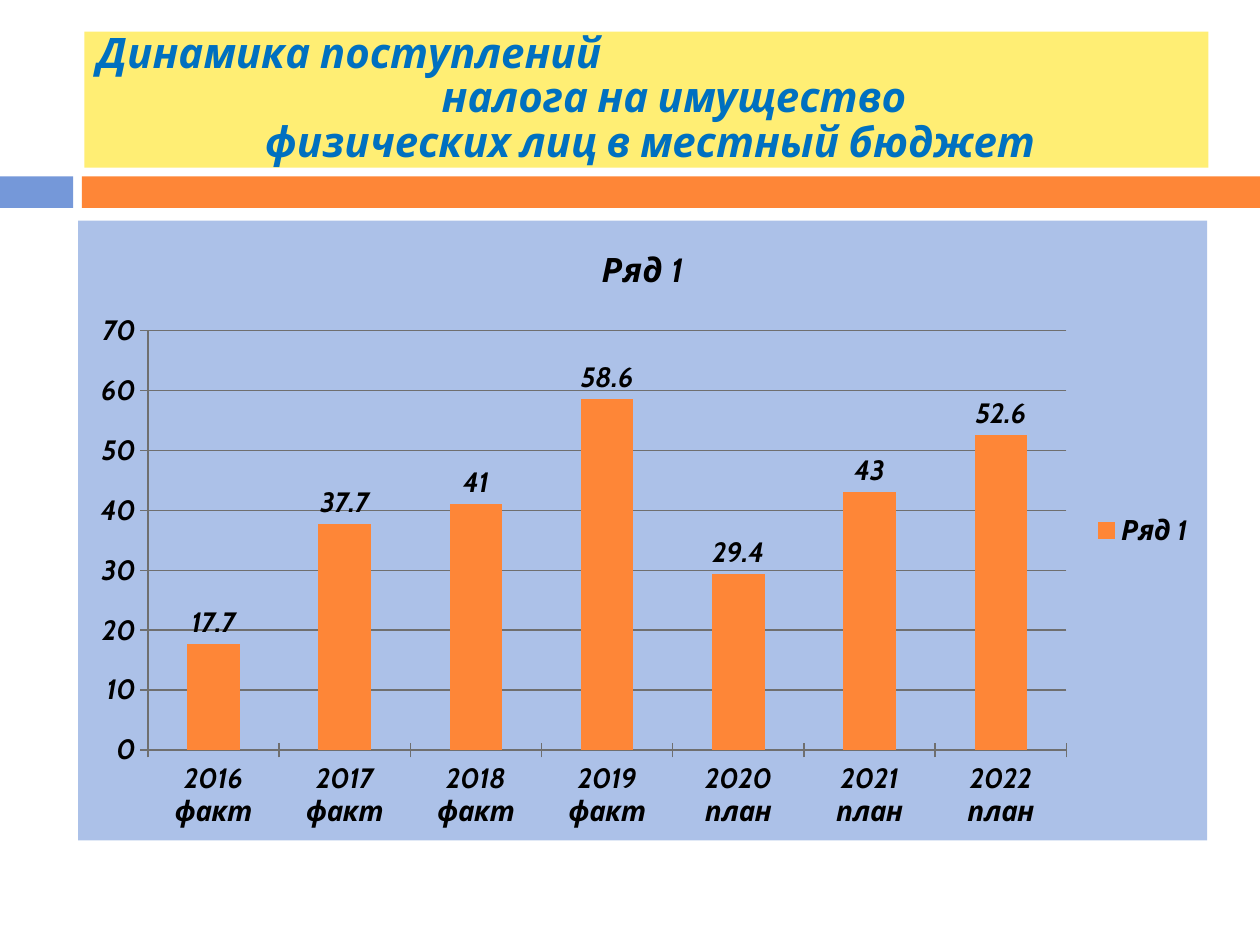
from lxml import etree
from pptx import Presentation
from pptx.chart.data import CategoryChartData
from pptx.dml.color import RGBColor
from pptx.enum.chart import XL_CHART_TYPE, XL_LABEL_POSITION, XL_LEGEND_POSITION, XL_TICK_MARK
from pptx.enum.shapes import MSO_SHAPE
from pptx.enum.text import MSO_ANCHOR, MSO_AUTO_SIZE, PP_ALIGN
from pptx.oxml import parse_xml
from pptx.oxml.ns import nsdecls
from pptx.util import Inches, Pt

RECTANGLE = MSO_SHAPE.RECTANGLE
COLUMNS = XL_CHART_TYPE.COLUMN_CLUSTERED
OUTSIDE_END = XL_LABEL_POSITION.OUTSIDE_END
LEGEND_RIGHT = XL_LEGEND_POSITION.RIGHT
TICK_CROSS = XL_TICK_MARK.CROSS
MIDDLE = MSO_ANCHOR.MIDDLE
NO_AUTOFIT = MSO_AUTO_SIZE.NONE
LEFT, CENTER = PP_ALIGN.LEFT, PP_ALIGN.CENTER

ORANGE, BLUE = "FE8637", "7598D9"
YELLOW, TITLE_BLUE = "FFEE74", "0070C0"
PALE_BLUE, GRAY, BLACK = "ACC1E8", "6F6F6F", "000000"


def color(value):
    return RGBColor.from_string(value)


def box(left, top, width, height):
    return Inches(left), Inches(top), Inches(width), Inches(height)


class SlideBuilder:
    font_name = "Cabin"

    def __init__(self, slide):
        self.slide = slide

    def style_font(self, font, size, font_color):
        font.name = self.font_name
        font.size = Pt(size)
        font.bold = font.italic = True
        font.color.rgb = color(font_color)

    def bar(self, left, top, width, height, fill):
        shape = self.slide.shapes.add_shape(RECTANGLE, *box(left, top, width, height))
        shape.shadow.inherit = False
        shape.fill.solid()
        shape.fill.fore_color.rgb = color(fill)
        shape.line.fill.background()

    def title(self, lines, left, top, width, height):
        """Fill the title from (text, alignment, left margin) lines."""
        shape = self.slide.shapes.title
        shape.left, shape.top, shape.width, shape.height = box(left, top, width, height)
        shape.fill.solid()
        shape.fill.fore_color.rgb = color(YELLOW)
        frame = shape.text_frame
        frame.word_wrap = True
        frame.auto_size = NO_AUTOFIT
        frame.vertical_anchor = MIDDLE
        frame.text = "\n".join(text for text, _, _ in lines)
        for paragraph, (_, alignment, margin) in zip(frame.paragraphs, lines):
            paragraph.alignment = alignment
            paragraph.line_spacing = 0.88
            paragraph._p.get_or_add_pPr().set("marL", str(Inches(margin)))
            self.style_font(paragraph.font, 24, TITLE_BLUE)

    def column_chart(self, name, values, left, top, width, height):
        data = CategoryChartData()
        data.categories = list(values)
        data.add_series(name, list(values.values()))
        chart = self.slide.shapes.add_chart(COLUMNS, *box(left, top, width, height), data).chart
        self.style_font(chart.font, 16, BLACK)
        self.chart_background(chart, PALE_BLUE)

        chart.has_title = True
        chart.chart_title.include_in_layout = False
        title_frame = chart.chart_title.text_frame
        title_frame.text = name
        self.style_font(title_frame.paragraphs[0].font, 19.2, BLACK)

        chart.has_legend = True
        chart.legend.position = LEGEND_RIGHT
        chart.legend.include_in_layout = False

        for axis in (chart.category_axis, chart.value_axis):
            axis.major_tick_mark = TICK_CROSS
            axis.format.line.color.rgb = color(GRAY)
        gridlines = chart.value_axis.major_gridlines
        gridlines.format.line.color.rgb = color(GRAY)
        chart.value_axis.minimum_scale = 0
        chart.value_axis.maximum_scale = 70
        chart.value_axis.major_unit = 10

        plot = chart.plots[0]
        plot.vary_by_categories = False
        plot.gap_width = 150
        plot.has_data_labels = True
        plot.data_labels.show_value = True
        plot.data_labels.position = OUTSIDE_END
        series = plot.series[0]
        series.format.fill.solid()
        series.format.fill.fore_color.rgb = color(ORANGE)

    def chart_background(self, chart, fill):
        properties = parse_xml(f"<c:spPr {nsdecls('c', 'a')}/>")
        solid = etree.SubElement(properties, f"{{{properties.nsmap['a']}}}solidFill")
        etree.SubElement(solid, f"{{{properties.nsmap['a']}}}srgbClr", val=fill)
        chart._chartSpace.chart.addnext(properties)


def main():
    presentation = Presentation()
    presentation.slide_width, presentation.slide_height = Inches(10), Inches(7.5)
    title_only = presentation.slide_layouts[5]
    builder = SlideBuilder(presentation.slides.add_slide(title_only))

    builder.bar(0, 1.4, 0.58, 0.25, BLUE)
    builder.bar(0.65, 1.4, 9.35, 0.25, ORANGE)
    builder.title(
        [
            ("Динамика поступлений", LEFT, 0),
            ("налога на имущество", CENTER, 0.44),
            ("физических лиц в местный бюджет", CENTER, 0.06),
        ],
        0.67, 0.25, 8.92, 1.08,
    )
    revenue = {
        "2016 факт": 17.7,
        "2017 факт": 37.7,
        "2018 факт": 41,
        "2019 факт": 58.6,
        "2020 план": 29.4,
        "2021 план": 43,
        "2022 план": 52.6,
    }
    builder.column_chart("Ряд 1", revenue, 0.62, 1.75, 8.96, 4.92)
    presentation.save("out.pptx")


if __name__ == "__main__":
    main()
